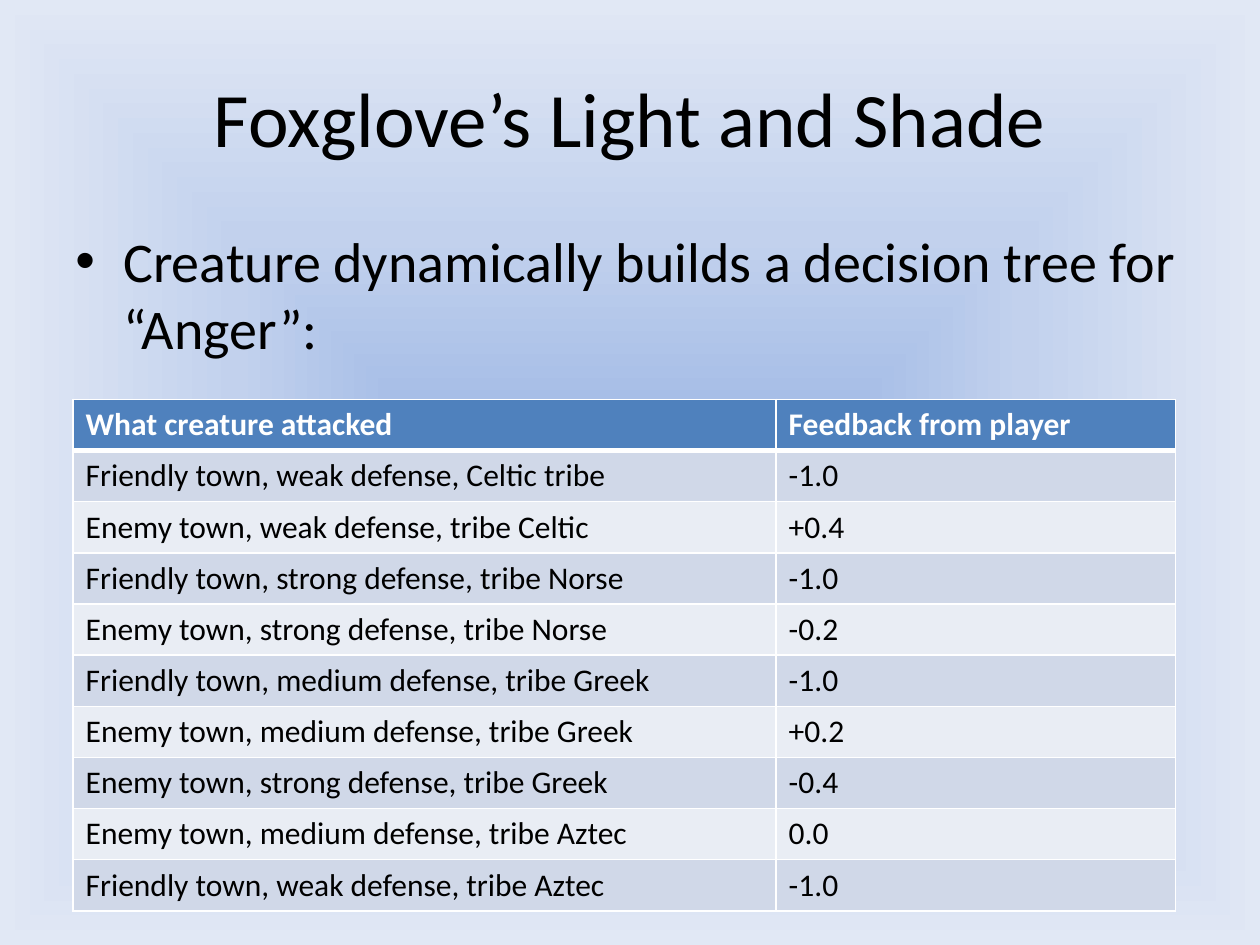
import pptx
import pptx.dml.color
import pptx.enum.text
import pptx.oxml
import pptx.oxml.ns
import pptx.util
from pptx.util import Inches

COLORS = {
    "black": "000000", "white": "FFFFFF", "head": "4F81BD",
    "odd": "D0D8E8", "even": "E9EDF4",
    "core": "9AB5E4", "mid": "C2D1ED", "edge": "E1E8F5",
}
ALIGN = pptx.enum.text.PP_ALIGN
ANCHOR = pptx.enum.text.MSO_ANCHOR
NS = pptx.oxml.ns.nsdecls("a")


def write(frame, text, size=18, color="black", bold=False, align=ALIGN.LEFT, bullet=False):
    frame.word_wrap = True
    para = frame.paragraphs[0]
    para.alignment = align
    run = para.add_run()
    run.text = text
    run.font.name = "Calibri"
    run.font.size = pptx.util.Pt(size)
    run.font.bold = bold
    run.font.color.rgb = pptx.dml.color.RGBColor.from_string(COLORS[color])
    if bullet:
        para.space_before = pptx.util.Pt(size * 0.2)
        props = para._p.get_or_add_pPr()
        props.set("marL", str(Inches(0.38)))
        props.set("indent", str(Inches(-0.38)))
        props.append(pptx.oxml.parse_xml(f'<a:buFont {NS} typeface="Arial"/>'))
        props.append(pptx.oxml.parse_xml(f'<a:buChar {NS} char="•"/>'))


def edge(cell, widths):
    """Draw white cell borders; widths maps a side (L, R, T, B) to points."""
    props = cell._tc.get_or_add_tcPr()
    for spot, (side, width) in enumerate(widths.items()):
        props.insert(spot, pptx.oxml.parse_xml(
            f'<a:ln{side} {NS} w="{pptx.util.Pt(width)}"><a:solidFill>'
            f'<a:srgbClr val="{COLORS["white"]}"/></a:solidFill></a:ln{side}>'))


deck = pptx.Presentation()
deck.slide_width, deck.slide_height = Inches(10), Inches(7.5)
slide = deck.slides.add_slide(deck.slide_layouts[6])

# Background: gradient spreading from the centre
back = slide.background.fill
back.solid()
stops = "".join(
    f'<a:gs pos="{pos * 1000}"><a:srgbClr val="{COLORS[name]}"/></a:gs>'
    for pos, name in ((0, "core"), (50, "mid"), (100, "edge")))
grad = pptx.oxml.parse_xml(
    f'<a:gradFill {NS} rotWithShape="1"><a:gsLst>{stops}</a:gsLst><a:path path="shape">'
    '<a:fillToRect l="50000" t="50000" r="50000" b="50000"/></a:path></a:gradFill>')
solid = slide._element.find(".//" + pptx.oxml.ns.qn("p:bgPr"))[0]
solid.getparent().replace(solid, grad)

# Title and bullet
title = slide.shapes.add_textbox(Inches(0.5), Inches(0.3), Inches(9), Inches(1.25))
title.text_frame.vertical_anchor = ANCHOR.MIDDLE
write(title.text_frame, "Foxglove’s Light and Shade", size=44, align=ALIGN.CENTER)

body = slide.shapes.add_textbox(Inches(0.5), Inches(1.75), Inches(9), Inches(4.95))
write(body.text_frame, "Creature dynamically builds a decision tree for “Anger”:",
      size=32, bullet=True)

# Feedback table
rows = [
    ("What creature attacked", "Feedback from player"),
    ("Friendly town, weak defense, Celtic tribe", "-1.0"),
    ("Enemy town, weak defense, tribe Celtic", "+0.4"),
    ("Friendly town, strong defense, tribe Norse", "-1.0"),
    ("Enemy town, strong defense, tribe Norse", "-0.2"),
    ("Friendly town, medium defense, tribe Greek", "-1.0"),
    ("Enemy town, medium defense, tribe Greek", "+0.2"),
    ("Enemy town, strong defense, tribe Greek", "-0.4"),
    ("Enemy town, medium defense, tribe Aztec", "0.0"),
    ("Friendly town, weak defense, tribe Aztec", "-1.0"),
]
table = slide.shapes.add_table(len(rows), 2, Inches(0.58), Inches(3.17),
                               Inches(8.75), Inches(4.06)).table
for col, width in zip(table.columns, (5.58, 3.17)):
    col.width = Inches(width)

for r, row in enumerate(rows):
    head = r == 0
    fill = "head" if head else ("even", "odd")[r % 2]
    for c, text in enumerate(row):
        cell = table.cell(r, c)
        cell.fill.solid()
        cell.fill.fore_color.rgb = pptx.dml.color.RGBColor.from_string(COLORS[fill])
        edge(cell, {"L": 1, "R": 1, "T": 3 if r == 1 else 1, "B": 3 if head else 1})
        write(cell.text_frame, text, color="white" if head else "black", bold=head)

deck.save("out.pptx")
